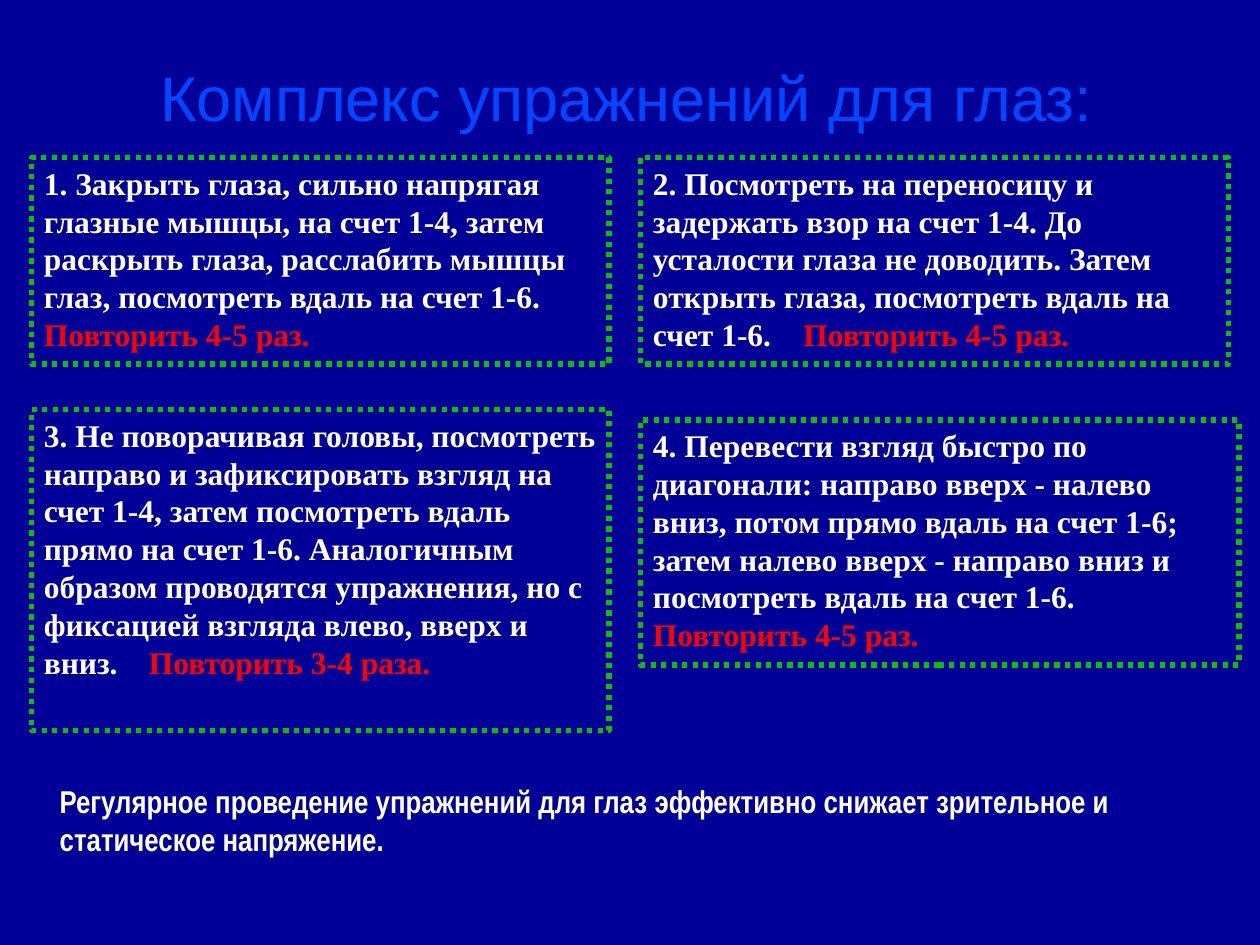
import pptx
import pptx.util
from lxml import etree
from pptx.dml.color import RGBColor
from pptx.enum.dml import MSO_LINE
from pptx.enum.shapes import MSO_SHAPE
from pptx.enum.text import MSO_ANCHOR, MSO_AUTO_SIZE, PP_ALIGN
from pptx.oxml.ns import qn
from pptx.util import Pt

NAVY = RGBColor(0x00, 0x00, 0x99)
BLUE = RGBColor(0x00, 0x47, 0xFF)
GREEN = RGBColor(0x00, 0xC6, 0x00)
WHITE = RGBColor(0xFF, 0xFF, 0xFF)
RED = RGBColor(0xFF, 0x00, 0x00)

TITLE = "Комплекс упражнений для глаз:"
SUMMARY = ("Регулярное проведение упражнений для глаз эффективно снижает "
           "зрительное и статическое напряжение.")

LEFT, RIGHT = 18, 366
# left, top, width, height, instruction, repetition, tab stop before the repetition
EXERCISES = [
    (LEFT, 90, 330, 118,
     "1. Закрыть глаза, сильно напрягая глазные мышцы, на счет 1-4, затем "
     "раскрыть глаза, расслабить мышцы глаз, посмотреть вдаль на счет 1-6. ",
     "Повторить 4-5 раз.", None),
    (RIGHT, 90, 336, 118,
     "2. Посмотреть на переносицу и задержать взор на счет 1-4. До усталости "
     "глаза не доводить. Затем открыть глаза, посмотреть вдаль на счет 1-6.",
     "Повторить 4-5 раз.", 86),
    (LEFT, 234, 330, 183.5,
     "3. Не поворачивая головы, посмотреть направо и зафиксировать взгляд на "
     "счет 1-4, затем посмотреть вдаль прямо на счет 1-6. Аналогичным образом "
     "проводятся упражнения, но с фиксацией взгляда влево, вверх и вниз.",
     "Повторить 3-4 раза.", 60),
    (RIGHT, 240, 342, 140,
     "4. Перевести взгляд быстро по диагонали: направо вверх - налево вниз, "
     "потом прямо вдаль на счет 1-6; затем налево вверх - направо вниз и "
     "посмотреть вдаль на счет 1-6. ",
     "Повторить 4-5 раз.", None),
]


def add_run(paragraph, text, font_name, size, color, bold=True):
    run = paragraph.add_run()
    run.text = text
    run.font.name = font_name
    run.font.size = Pt(size)
    run.font.bold = bold
    run.font.color.rgb = color


def start_body(shape):
    """Set up a wrapped, top-left text frame and return its first paragraph."""
    frame = shape.text_frame
    frame.word_wrap = True
    frame.vertical_anchor = MSO_ANCHOR.TOP
    paragraph = frame.paragraphs[0]
    paragraph.alignment = PP_ALIGN.LEFT
    return paragraph


def add_tab_stop(paragraph, position):
    properties = paragraph._p.get_or_add_pPr()
    tab_list = etree.SubElement(properties, qn("a:tabLst"))
    etree.SubElement(tab_list, qn("a:tab"), pos=str(Pt(position)), algn="l")


def add_exercise(slide, left, top, width, height, instruction, repetition, tab_stop):
    box = slide.shapes.add_shape(
        MSO_SHAPE.RECTANGLE, Pt(left), Pt(top), Pt(width), Pt(height))
    box.shadow.inherit = False
    box.fill.solid()
    box.fill.fore_color.rgb = NAVY
    box.line.color.rgb = GREEN
    box.line.width = Pt(3)
    box.line.dash_style = MSO_LINE.ROUND_DOT
    paragraph = start_body(box)
    if tab_stop:
        add_tab_stop(paragraph, tab_stop)
        instruction += "\t"
    add_run(paragraph, instruction, "Times New Roman", 18, WHITE)
    add_run(paragraph, repetition, "Times New Roman", 18, RED)


def main():
    presentation = pptx.Presentation()
    presentation.slide_width, presentation.slide_height = Pt(720), Pt(540)
    slide = presentation.slides.add_slide(presentation.slide_layouts[5])
    slide.background.fill.solid()
    slide.background.fill.fore_color.rgb = NAVY

    title = slide.shapes.title
    title.left, title.top, title.width, title.height = Pt(24), Pt(30), Pt(668), Pt(42)
    frame = title.text_frame
    frame.word_wrap = False
    frame.auto_size = MSO_AUTO_SIZE.NONE
    frame.vertical_anchor = MSO_ANCHOR.TOP
    frame.paragraphs[0].alignment = PP_ALIGN.CENTER
    add_run(frame.paragraphs[0], TITLE, "Arial", 36, BLUE, bold=False)

    for exercise in EXERCISES:
        add_exercise(slide, *exercise)

    summary = slide.shapes.add_textbox(Pt(27), Pt(443.5), Pt(666), Pt(50))
    add_run(start_body(summary), SUMMARY, "Arial Narrow", 18, WHITE)

    presentation.save("out.pptx")


if __name__ == "__main__":
    main()
